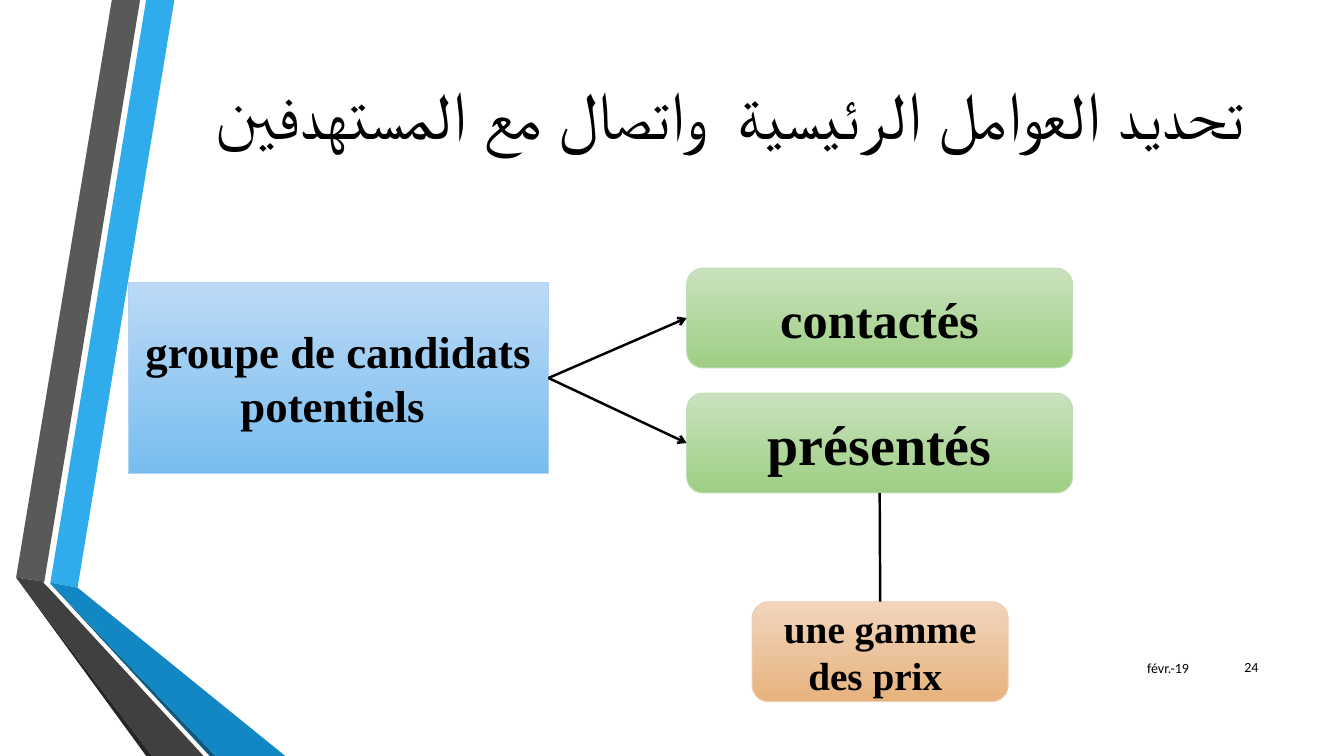
import dataclasses

import lxml.etree
import pptx
import pptx.dml.color
import pptx.enum.shapes
import pptx.enum.text
import pptx.oxml.ns
import pptx.util

PX = 9144
SHAPE = pptx.enum.shapes.MSO_SHAPE
ALIGN = pptx.enum.text.PP_ALIGN
ANCHOR = pptx.enum.text.MSO_ANCHOR
TOP, LEFT, BOTTOM, RIGHT = range(4)


@dataclasses.dataclass(frozen=True)
class Theme:
    heading_font: str = "Times New Roman"
    footer_font: str = "Calibri"
    text: str = "000000"
    title_size: int = 48
    footer_size: int = 10
    group_size: int = 32
    contacted_size: int = 36
    presented_size: int = 40
    price_size: int = 28
    border_width: float = 0.75
    connector_width: float = 1.75
    blue: tuple = ("BCDAF6", "78BDEF", "AED2F4")
    green: tuple = ("C9E2BE", "9ECE83", "C0DEB3")
    orange: tuple = ("F1D5BD", "E7B27D", "EECCAF")


THEME = Theme()

RIBBONS = [
    ("30ACEC", [(50, 578), (77, 583), (173, 0), (145, 0)]),
    ("595959", [(139, 0), (111, 0), (16, 573), (44, 577)]),
    ("262626", [(16, 573), (145, 750), (151, 750)]),
    ("0C5A82", [(50, 579), (208, 750), (214, 750)]),
    ("1287C3", [(50, 579), (214, 750), (283, 750), (77, 583), (50, 578)]),
    ("404040", [(202, 750), (48, 583), (43, 578), (44, 577), (16, 573), (151, 750)]),
]


def rgb(value):
    return pptx.dml.color.RGBColor.from_string(value)


def px(*values):
    return [value * PX for value in values]


def set_attributes(target, values):
    for name, value in values.items():
        setattr(target, name, value)


def write_text(shape, text, size, font_name, alignment, bold=False):
    frame = shape.text_frame
    set_attributes(frame, {
        "text": text,
        "word_wrap": True,
        "auto_size": pptx.enum.text.MSO_AUTO_SIZE.NONE,
        "vertical_anchor": ANCHOR.MIDDLE,
    })
    paragraph = frame.paragraphs[0]
    paragraph.alignment = alignment
    font = paragraph.runs[0].font
    set_attributes(font, {"name": font_name, "size": pptx.util.Pt(size), "bold": bold})
    font.color.rgb = rgb(THEME.text)
    return paragraph


def add_ribbon(slide, color, points):
    builder = slide.shapes.build_freeform(*points[0], scale=PX)
    builder.add_line_segments(points[1:], close=True)
    shape = builder.convert_to_shape()
    shape.shadow.inherit = False
    shape.fill.solid()
    shape.fill.fore_color.rgb = rgb(color)
    shape.line.fill.background()


def add_title(slide, text, box):
    title = slide.shapes.title
    set_attributes(title, dict(zip(("left", "top", "width", "height"), px(*box))))
    paragraph = write_text(title, text, THEME.title_size, THEME.heading_font, ALIGN.CENTER)
    paragraph._p.get_or_add_pPr().set("rtl", "1")
    properties = paragraph.runs[0]._r.get_or_add_rPr()
    properties.set("lang", "ar-SA")
    script_font = lxml.etree.SubElement(properties, pptx.oxml.ns.qn("a:cs"))
    script_font.set("typeface", THEME.heading_font)


def add_box(slide, kind, text, box, size, colors):
    start, end, border = colors
    shape = slide.shapes.add_shape(kind, *px(*box))
    shape.shadow.inherit = False
    shape.fill.gradient()
    shape.fill.gradient_angle = 270
    for stop, color in zip(shape.fill.gradient_stops, (start, end)):
        stop.color.rgb = rgb(color)
    shape.line.color.rgb = rgb(border)
    shape.line.width = pptx.util.Pt(THEME.border_width)
    write_text(shape, text, size, THEME.heading_font, ALIGN.CENTER, bold=True)
    return shape


def add_link(slide, source, source_side, target, target_side, arrow=False):
    connector = slide.shapes.add_connector(
        pptx.enum.shapes.MSO_CONNECTOR.STRAIGHT, 0, 0, 0, 0)
    connector.begin_connect(source, source_side)
    connector.end_connect(target, target_side)
    connector.line.color.rgb = rgb(THEME.text)
    connector.line.width = pptx.util.Pt(THEME.connector_width)
    if arrow:
        line = connector.line._get_or_add_ln()
        lxml.etree.SubElement(line, pptx.oxml.ns.qn("a:tailEnd")).set("type", "arrow")
    lxml.etree.SubElement(connector._element.spPr, pptx.oxml.ns.qn("a:effectLst"))


def add_footer(slide, text, box):
    shape = slide.shapes.add_textbox(*px(*box))
    write_text(shape, text, THEME.footer_size, THEME.footer_font, ALIGN.RIGHT)


def main():
    presentation = pptx.Presentation()
    set_attributes(presentation, {"slide_width": 1333 * PX, "slide_height": 750 * PX})
    slide = presentation.slides.add_slide(presentation.slide_layouts[5])

    for color, points in RIBBONS:
        add_ribbon(slide, color, points)
    add_title(slide, "تحديد العوامل الرئيسية  واتصال مع المستهدفين", (176, 16, 1096, 192))

    group = add_box(slide, SHAPE.RECTANGLE, "groupe de candidats potentiels ",
                    (127, 280, 417, 190), THEME.group_size, THEME.blue)
    contacted = add_box(slide, SHAPE.ROUNDED_RECTANGLE, "contactés",
                        (681, 266, 383, 99), THEME.contacted_size, THEME.green)
    presented = add_box(slide, SHAPE.ROUNDED_RECTANGLE, "présentés",
                        (681, 390, 383, 99), THEME.presented_size, THEME.green)
    prices = add_box(slide, SHAPE.ROUNDED_RECTANGLE, "une gamme des prix ",
                     (746, 597, 254, 99), THEME.price_size, THEME.orange)

    for target in (contacted, presented):
        add_link(slide, group, RIGHT, target, LEFT, arrow=True)
    add_link(slide, presented, BOTTOM, prices, TOP)

    add_footer(slide, "févr.-19", (1064, 643, 125, 40))
    add_footer(slide, "24", (1198, 642, 60, 40))
    presentation.save("out.pptx")


if __name__ == "__main__":
    main()
